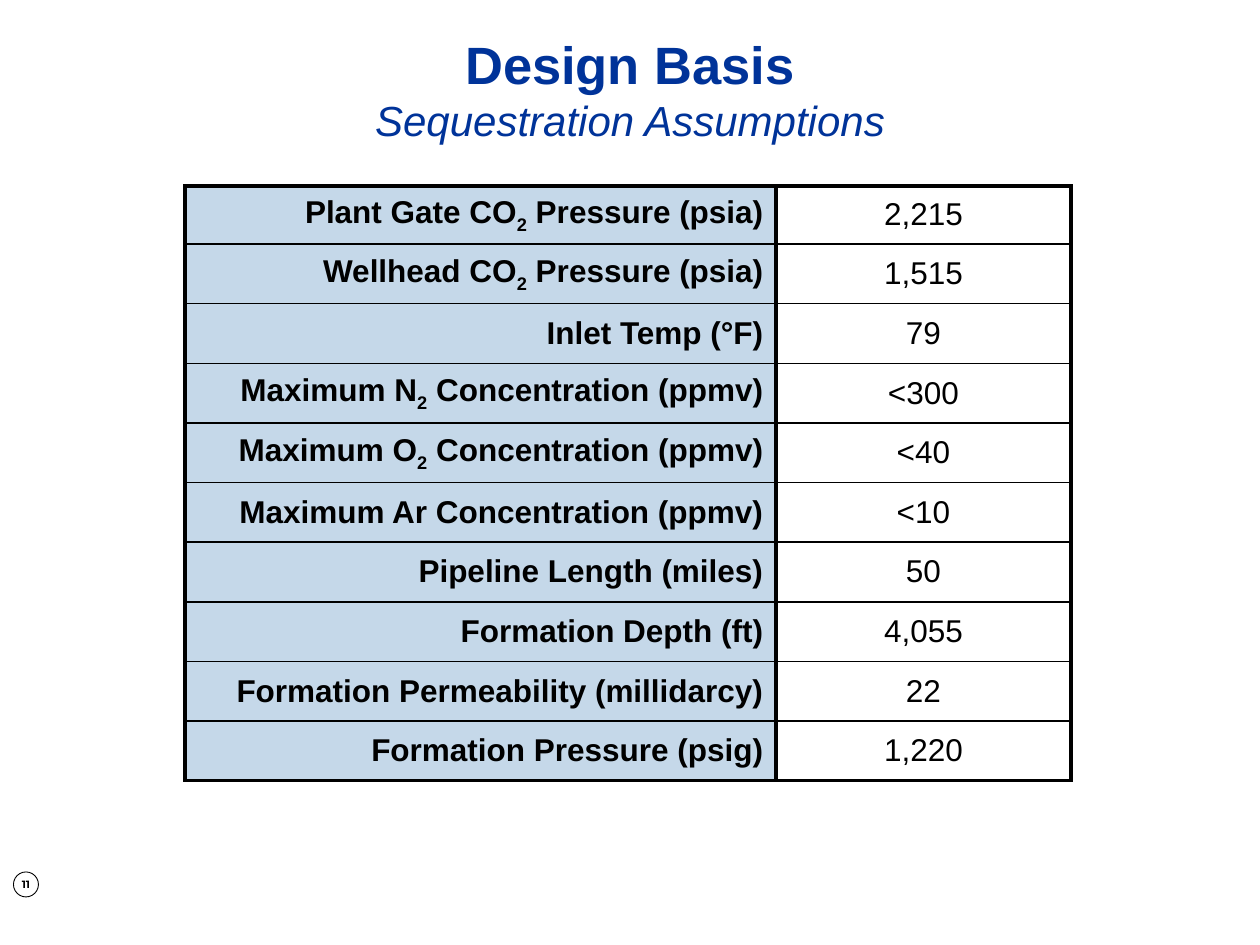
from lxml.etree import SubElement
from pptx import Presentation
from pptx.dml.color import RGBColor
from pptx.enum.shapes import MSO_SHAPE as Shape
from pptx.enum.text import MSO_ANCHOR as Anchor, PP_ALIGN as Align
from pptx.oxml.ns import qn
from pptx.util import Emu, Pt

PX_PER_INCH = 126
COLORS = {"navy": "003399", "label": "C5D8E9", "black": "000000", "white": "FFFFFF"}
THICK, THIN = 2.25, 1

# Label parts alternate between normal text and subscript
ASSUMPTIONS = [
    (("Plant Gate CO", "2", " Pressure (psia)"), "2,215"),
    (("Wellhead CO", "2", " Pressure (psia)"), "1,515"),
    (("Inlet Temp (°F)",), "79"),
    (("Maximum N", "2", " Concentration (ppmv)"), "<300"),
    (("Maximum O", "2", " Concentration (ppmv)"), "<40"),
    (("Maximum Ar Concentration (ppmv)",), "<10"),
    (("Pipeline Length (miles)",), "50"),
    (("Formation Depth (ft)",), "4,055"),
    (("Formation Permeability (millidarcy)",), "22"),
    (("Formation Pressure (psig)",), "1,220"),
]


def px(length):
    return Emu(round(length * 914400 / PX_PER_INCH))


def rgb(name):
    return RGBColor.from_string(COLORS[name])


def style(run, size, color, bold=False, italic=False, name="Arial"):
    font = run.font
    font.name, font.size, font.bold, font.italic = name, Pt(size), bold, italic
    font.color.rgb = rgb(color)


def add_border(cell, side, width):
    line = SubElement(cell._tc.get_or_add_tcPr(), qn(f"a:ln{side}"), w=str(Pt(width)))
    fill = SubElement(line, qn("a:solidFill"))
    SubElement(fill, qn("a:srgbClr"), val=COLORS["black"])


def add_text(slide, box, text):
    frame = slide.shapes.add_textbox(*map(px, box)).text_frame
    frame.word_wrap = True
    frame.vertical_anchor = Anchor.MIDDLE
    paragraph = frame.paragraphs[0]
    paragraph.text = text
    paragraph.alignment = Align.CENTER
    return paragraph.runs


def add_heading(slide, box):
    title, subtitle = add_text(slide, box, "Design Basis\vSequestration Assumptions")
    style(title, 30, "navy", bold=True)
    style(subtitle, 24, "navy", italic=True)


def fill_cell(cell, parts, align, bold):
    cell.vertical_anchor = Anchor.MIDDLE
    paragraph = cell.text_frame.paragraphs[0]
    paragraph.alignment = align
    for index, part in enumerate(parts):
        run = paragraph.add_run()
        run.text = part
        style(run, 18, "black", bold=bold)
        if index % 2:
            run._r.get_or_add_rPr().set("baseline", "-25000")


def add_assumptions(slide, box, label_width, first_height):
    left, top, width, height = box
    count = len(ASSUMPTIONS)
    table = slide.shapes.add_table(count, 2, *map(px, box)).table
    table.first_row = table.horz_banding = False
    table.columns[0].width = px(label_width)
    table.columns[1].width = px(width - label_width)
    other_height = (height - first_height) / (count - 1)

    for index, (label, value) in enumerate(ASSUMPTIONS):
        table.rows[index].height = px(other_height if index else first_height)
        label_cell, value_cell = table.cell(index, 0), table.cell(index, 1)
        fill_cell(label_cell, label, Align.RIGHT, bold=True)
        fill_cell(value_cell, (value,), Align.CENTER, bold=False)

        # Thick frame and divider, thin rules between rows
        borders = {
            "L": THICK,
            "R": THICK,
            "T": THIN if index else THICK,
            "B": THIN if index < count - 1 else THICK,
        }
        for cell in (label_cell, value_cell):
            for side, line_width in borders.items():
                add_border(cell, side, line_width)
        label_cell.fill.solid()
        label_cell.fill.fore_color.rgb = rgb("label")
        value_cell.fill.background()


def add_page_number(slide, box, number):
    left, top, width, height = box
    circle = slide.shapes.add_shape(
        Shape.OVAL, px(left + (width - height) / 2), px(top), px(height), px(height)
    )
    circle.shadow.inherit = False
    circle.fill.solid()
    circle.fill.fore_color.rgb = rgb("white")
    circle.line.color.rgb = rgb("black")
    circle.line.width = Pt(0.5)
    style(add_text(slide, box, number)[0], 6, "black", bold=True, name="Montserrat")


def main():
    deck = Presentation()
    deck.slide_width, deck.slide_height = px(1260), px(945)
    slide = deck.slides.add_slide(deck.slide_layouts[6])
    add_page_number(slide, (0, 872, 52, 25), "11")
    add_heading(slide, (63, 25, 1134, 127))
    add_assumptions(slide, (185, 186, 886, 595), label_width=591, first_height=58)
    deck.save("out.pptx")


if __name__ == "__main__":
    main()
